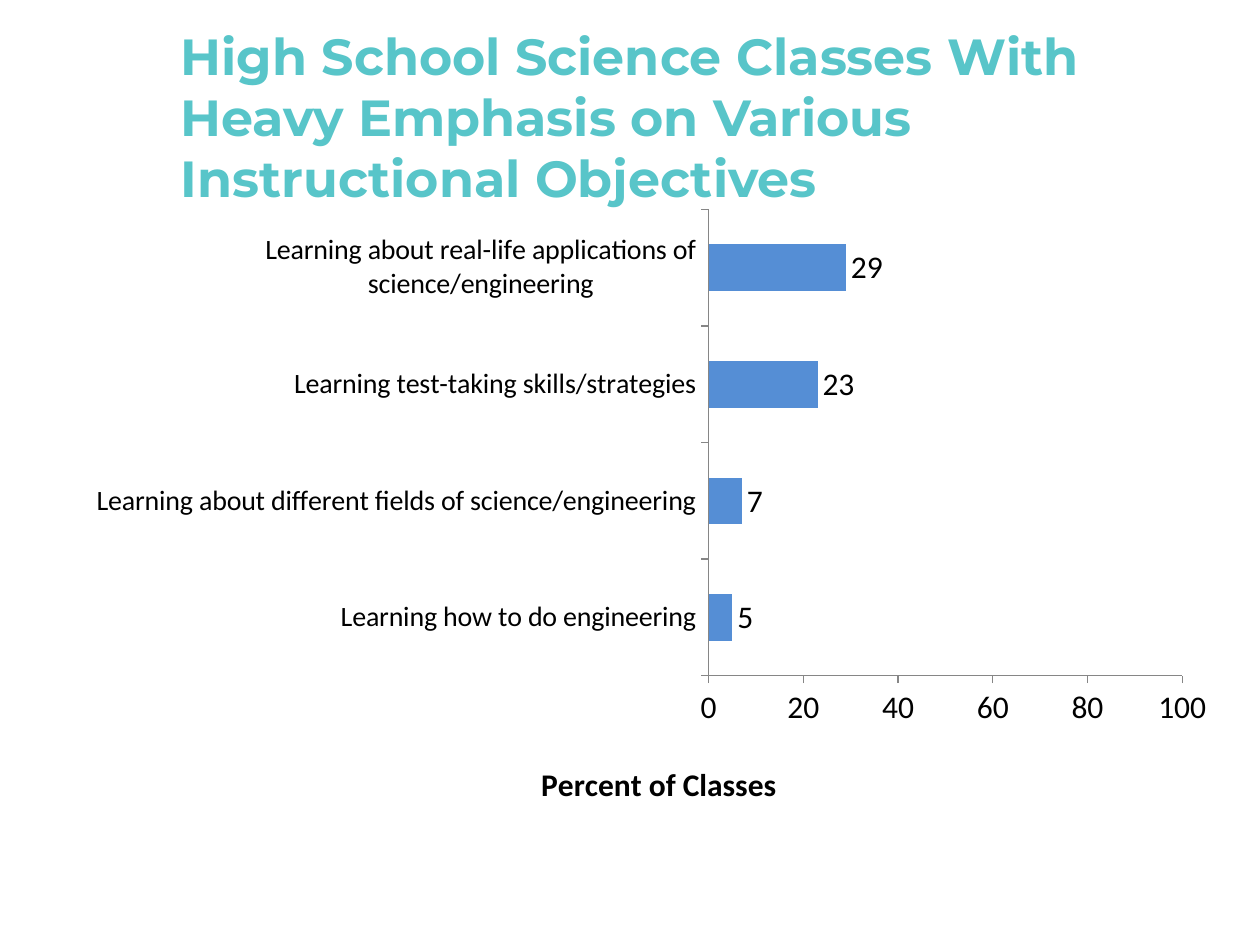
import dataclasses
import pptx
import pptx.chart.data
import pptx.dml.color
import pptx.enum.chart
import pptx.enum.text
import pptx.oxml
import pptx.oxml.ns
import pptx.util

Pt = pptx.util.Pt
ENUM = pptx.enum.chart


@dataclasses.dataclass
class Theme:
    head: str = "58C5C9"
    ink: str = "000000"
    bar: str = "558ED5"
    axis: str = "868686"
    head_font: str = "Montserrat"
    body_font: str = "Calibri"
    head_size: int = 29
    body_size: int = 18
    label_size: int = 16


def color(code):
    return pptx.dml.color.RGBColor.from_string(code)


def place(parent, index, target, **parts):
    """Give a chart part a manual layout, in fractions of the chart."""
    for old in parent.xpath("c:layout"):
        parent.remove(old)
    inner = f'<c:layoutTarget val="{target}"/>' if target else ""
    inner += '<c:xMode val="edge"/><c:yMode val="edge"/>'
    inner += "".join(f'<c:{key} val="{val}"/>' for key, val in parts.items())
    space = pptx.oxml.ns.nsdecls("c")
    parent.insert(index, pptx.oxml.parse_xml(
        f"<c:layout {space}><c:manualLayout>{inner}</c:manualLayout></c:layout>"))


class Page:
    def __init__(self, deck, theme):
        self.theme = theme
        self.slide = deck.slides.add_slide(deck.slide_layouts[5])

    def font(self, font, name, size, code, bold=False):
        font.name, font.size, font.bold = name, Pt(size), bold
        font.color.rgb = color(code)

    def title(self, text, left, top, width, height):
        theme = self.theme
        shape = self.slide.shapes.title
        shape.left, shape.top = Pt(left), Pt(top)
        shape.width, shape.height = Pt(width), Pt(height)
        frame = shape.text_frame
        frame.text = text
        frame.word_wrap = True
        frame.auto_size = pptx.enum.text.MSO_AUTO_SIZE.NONE
        frame.vertical_anchor = pptx.enum.text.MSO_ANCHOR.MIDDLE
        line = frame.paragraphs[0]
        line.alignment = pptx.enum.text.PP_ALIGN.LEFT
        self.font(line.font, theme.head_font, theme.head_size, theme.head, True)

    def bars(self, rows, caption, left, top, width, height):
        theme = self.theme
        data = pptx.chart.data.CategoryChartData()
        data.categories = [name for name, _ in rows]
        data.add_series("Series 1", [value for _, value in rows])
        chart = self.slide.shapes.add_chart(
            ENUM.XL_CHART_TYPE.BAR_CLUSTERED,
            Pt(left), Pt(top), Pt(width), Pt(height), data).chart
        self.font(chart.font, theme.body_font, theme.body_size, theme.ink)
        chart.has_legend = chart.has_title = False

        plot = chart.plots[0]
        plot.gap_width = 150
        plot.vary_by_categories = False
        fill = plot.series[0].format.fill
        fill.solid()
        fill.fore_color.rgb = color(theme.bar)
        plot.has_data_labels = True
        labels = plot.data_labels
        labels.show_value = True
        labels.position = ENUM.XL_LABEL_POSITION.OUTSIDE_END
        self.font(labels.font, theme.body_font, theme.body_size, theme.ink)

        sizes = theme.label_size, theme.body_size
        for axis, size in zip((chart.category_axis, chart.value_axis), sizes):
            axis.has_major_gridlines = False
            axis.major_tick_mark = ENUM.XL_TICK_MARK.OUTSIDE
            axis.minor_tick_mark = ENUM.XL_TICK_MARK.NONE
            axis.format.line.color.rgb = color(theme.axis)
            axis.format.line.width = Pt(0.75)
            self.font(axis.tick_labels.font, theme.body_font, size, theme.ink)

        scale = chart.value_axis
        scale.minimum_scale, scale.maximum_scale = 0, 100
        scale.major_unit = 20
        head = scale.axis_title
        head.text_frame.text = caption
        self.font(head.text_frame.paragraphs[0].font, theme.body_font,
                  theme.body_size, theme.ink, True)
        place(head.element, 1, None, x=0.4, y=0.9)
        area = chart.element.xpath("c:chart/c:plotArea")[0]
        place(area, 0, "inner", x=0.55, y=0.02, w=0.41, h=0.75)


def main():
    deck = pptx.Presentation()
    deck.slide_width, deck.slide_height = Pt(720), Pt(540)
    page = Page(deck, Theme())
    rows = [
        ("Learning how to do engineering", 5),
        ("Learning about different fields of science/engineering", 7),
        ("Learning test-taking skills/strategies", 23),
        ("Learning about real-life applications of science/engineering", 29),
    ]
    page.bars(rows, "Percent of Classes", 42, 112.5, 660, 355.5)
    page.title("High School Science Classes With Heavy Emphasis on "
               "Various Instructional Objectives", 96, 21.6, 588, 90)
    deck.save("out.pptx")


if __name__ == "__main__":
    main()
